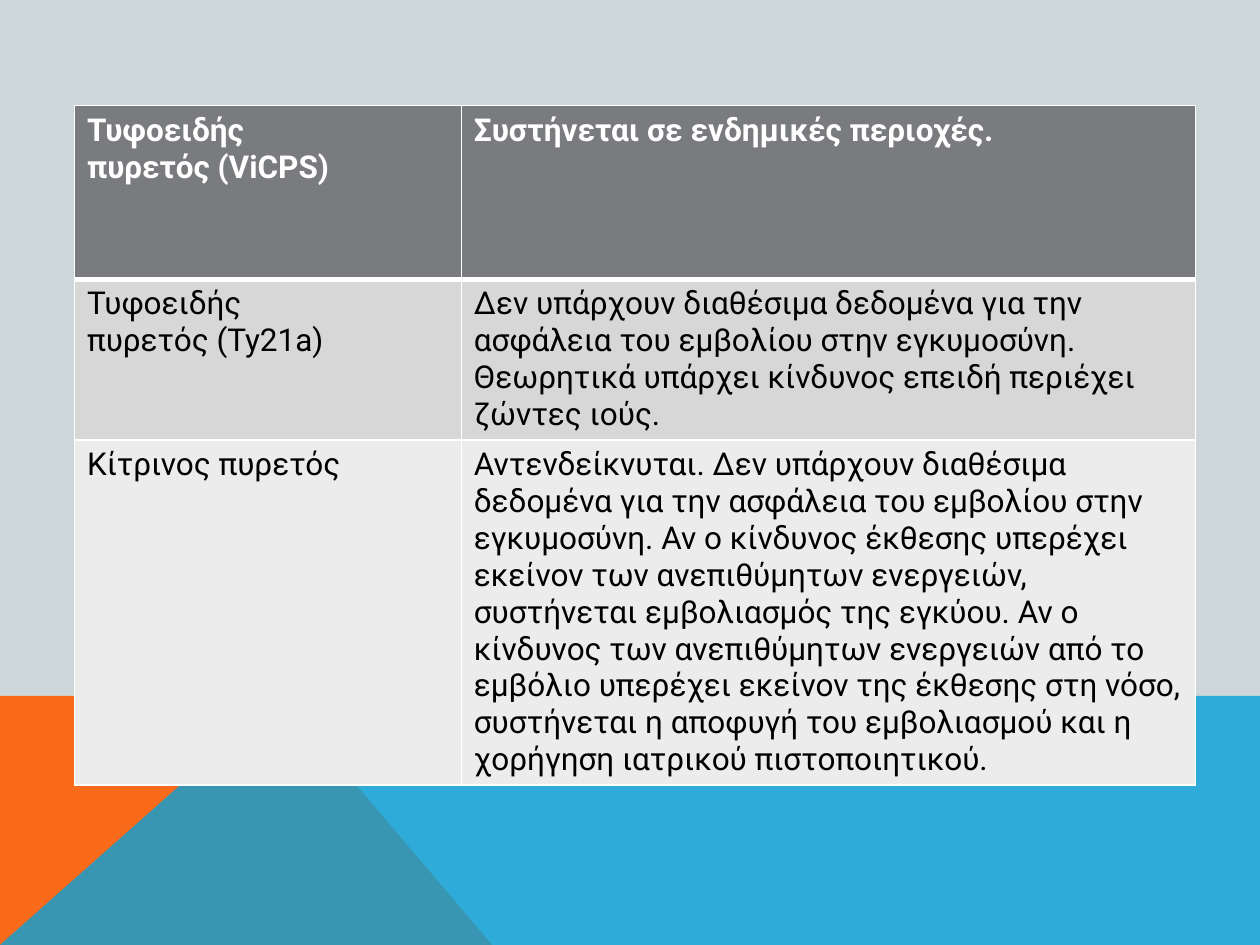
from dataclasses import dataclass

from lxml.etree import SubElement
from pptx import Presentation
from pptx.dml.color import RGBColor as Rgb
from pptx.oxml.ns import qn
from pptx.util import Cm, Pt


@dataclass(frozen=True)
class Theme:
    back: str = "CDD7D9"
    orange: str = "F96A1B"
    blue: str = "08A1D9"
    line: str = "FFFFFF"
    font: str = "Roboto"
    size: int = 18
    thin: int = 1
    thick: int = 3


THEME = Theme()
WIDE, HIGH = 25.4, 19.05

# Each row: height, fill, text colour, bold, cells as lists of paragraphs
ROWS = [
    (3.5, "797B7E", "FFFFFF", True, [
        ["Τυφοειδής", "πυρετός (ViCPS)"],
        ["Συστήνεται σε ενδημικές περιοχές."],
    ]),
    (3.2, "D7D7D8", "000000", False, [
        ["Τυφοειδής", "πυρετός (Ty21a)"],
        ["Δεν υπάρχουν διαθέσιμα δεδομένα για την ασφάλεια του εμβολίου "
         "στην εγκυμοσύνη. Θεωρητικά υπάρχει κίνδυνος επειδή περιέχει "
         "ζώντες ιούς."],
    ]),
    (6.9, "ECECEC", "000000", False, [
        ["Κίτρινος πυρετός"],
        ["Αντενδείκνυται. Δεν υπάρχουν διαθέσιμα δεδομένα για την ασφάλεια "
         "του εμβολίου στην εγκυμοσύνη. Αν ο κίνδυνος έκθεσης υπερέχει "
         "εκείνον των ανεπιθύμητων ενεργειών, συστήνεται εμβολιασμός της "
         "εγκύου. Αν ο",
         "κίνδυνος των ανεπιθύμητων ενεργειών από το εμβόλιο υπερέχει "
         "εκείνον της έκθεσης στη νόσο, συστήνεται η αποφυγή του "
         "εμβολιασμού και η χορήγηση ιατρικού πιστοποιητικού."],
    ]),
]
COLS = [7.8, 14.8]
LEFT, TOP = 1.5, 2.13

# Floor bands: colour, opacity in percent, corners
EDGE, PEAK = 14.03, 5.66
BANDS = [
    (THEME.orange, 100, [(0, HIGH), (0, EDGE), (PEAK, EDGE), (9.92, HIGH)]),
    (THEME.blue, 80, [(0, HIGH), (PEAK, EDGE), (WIDE, EDGE), (WIDE, HIGH)]),
]


def add_band(slide, color, alpha, spots):
    first, *rest = [(Cm(x), Cm(y)) for x, y in spots]
    pen = slide.shapes.build_freeform(*first)
    pen.add_line_segments(rest, close=True)
    band = pen.convert_to_shape()
    band.shadow.inherit = False
    band.line.fill.background()
    band.fill.solid()
    band.fill.fore_color.rgb = Rgb.from_string(color)
    if alpha < 100:
        tint = band.fill._xPr.find(".//" + qn("a:srgbClr"))
        SubElement(tint, qn("a:alpha"), val=str(alpha * 1000))


def add_edges(cell, widths):
    """Draw cell borders; widths maps a side (L, R, T, B) to points."""
    props = cell._tc.get_or_add_tcPr()
    for spot, (side, width) in enumerate(widths.items()):
        edge = props.makeelement(qn(f"a:ln{side}"), {"w": str(Pt(width))})
        props.insert(spot, edge)
        fill = SubElement(edge, qn("a:solidFill"))
        SubElement(fill, qn("a:srgbClr"), val=THEME.line)


def fill_cell(cell, paras, fill, color, bold):
    cell.fill.solid()
    cell.fill.fore_color.rgb = Rgb.from_string(fill)
    frame = cell.text_frame
    for i, text in enumerate(paras):
        para = frame.add_paragraph() if i else frame.paragraphs[0]
        run = para.add_run()
        run.text = text
        font = run.font
        font.name, font.size, font.bold = THEME.font, Pt(THEME.size), bold
        font.color.rgb = Rgb.from_string(color)


def add_grid(slide):
    high = sum(row[0] for row in ROWS)
    table = slide.shapes.add_table(
        len(ROWS), len(COLS), Cm(LEFT), Cm(TOP), Cm(sum(COLS)), Cm(high)
    ).table
    for col, width in zip(table.columns, COLS):
        col.width = Cm(width)
    for r, (height, fill, color, bold, cells) in enumerate(ROWS):
        table.rows[r].height = Cm(height)
        top = THEME.thick if r == 1 else THEME.thin
        base = THEME.thick if r == 0 else THEME.thin
        for c, paras in enumerate(cells):
            cell = table.cell(r, c)
            fill_cell(cell, paras, fill, color, bold)
            add_edges(cell, {"L": THEME.thin, "R": THEME.thin,
                             "T": top, "B": base})


def main():
    deck = Presentation()
    deck.slide_width, deck.slide_height = Cm(WIDE), Cm(HIGH)
    slide = deck.slides.add_slide(deck.slide_layouts[6])
    back = slide.background.fill
    back.solid()
    back.fore_color.rgb = Rgb.from_string(THEME.back)
    for band in BANDS:
        add_band(slide, *band)
    add_grid(slide)
    deck.save("out.pptx")


if __name__ == "__main__":
    main()
